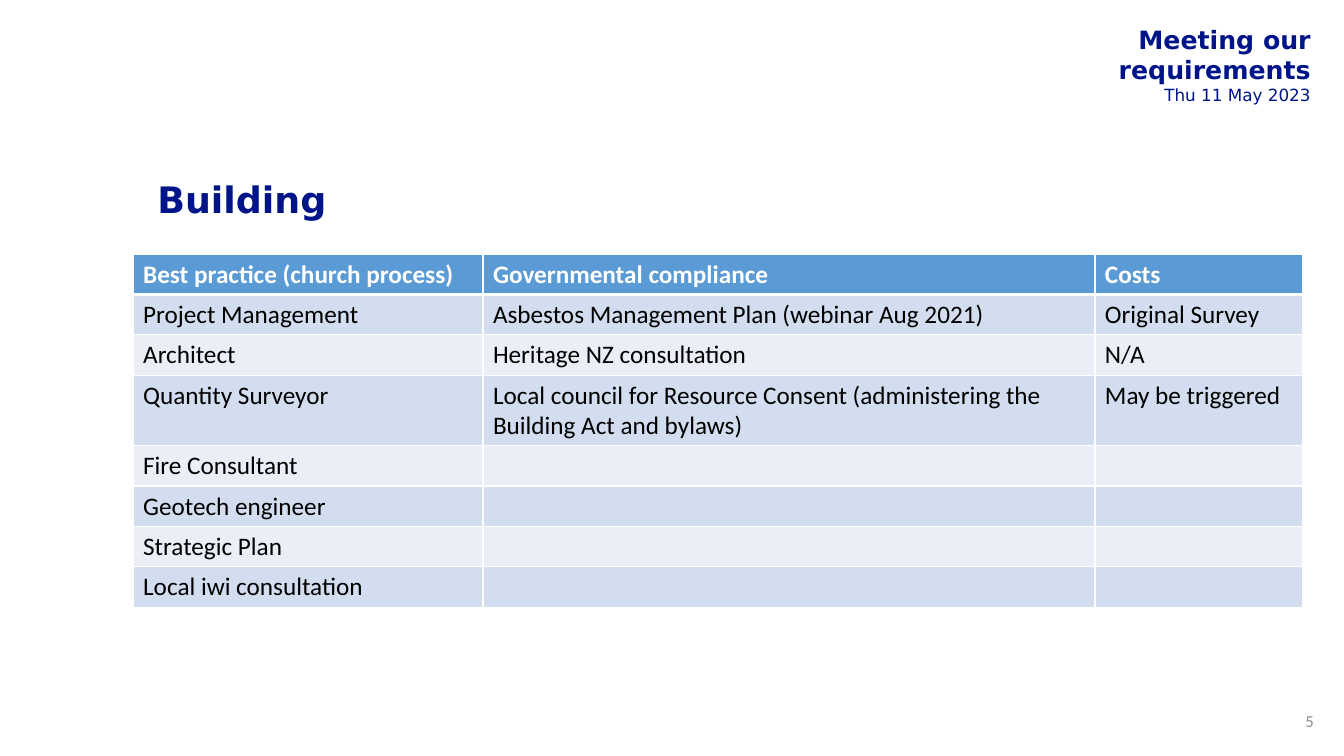
import dataclasses
import typing

import lxml.etree
import pptx
import pptx.dml.color
import pptx.enum.text
import pptx.oxml
import pptx.oxml.ns
import pptx.util

EMU_PER_PX = 9144
ALIGN = pptx.enum.text.PP_ALIGN
ANCHOR = pptx.enum.text.MSO_ANCHOR


@dataclasses.dataclass(frozen=True)
class Theme:
    navy: str = "001489"
    white: str = "FFFFFF"
    black: str = "000000"
    grey: str = "8C8C8C"
    header_fill: str = "5B9BD5"
    band_fills: tuple[str, str] = ("D2DEEF", "EAEFF7")
    heading_font: str = "DejaVu Sans"
    body_font: str = "Calibri"
    title_size: int = 26
    text_size: int = 18
    small_size: int = 12


@dataclasses.dataclass(frozen=True)
class Box:
    left: int
    top: int
    width: int
    height: int

    def emu(self) -> list[int]:
        return [px(length) for length in dataclasses.astuple(self)]


@dataclasses.dataclass(frozen=True)
class TextLine:
    text: str
    size: int
    bold: bool


THEME = Theme()
TITLE_BOX = Box(146, 150, 1120, 101)
MEETING_BOX = Box(922, 20, 385, 88)
NUMBER_BOX = Box(1271, 695, 42, 40)
TABLE_BOX = Box(132, 252, 1160, 320)
COLUMN_WIDTHS = (347, 607, 206)
MEETING_LINES = (
    TextLine("Meeting our requirements", THEME.text_size, True),
    TextLine("Thu 11 May 2023", THEME.small_size, False),
)
ROWS = (
    ("Best practice (church process)", "Governmental compliance", "Costs"),
    ("Project Management", "Asbestos Management Plan (webinar Aug 2021)", "Original Survey"),
    ("Architect", "Heritage NZ consultation", "N/A"),
    (
        "Quantity Surveyor",
        "Local council for Resource Consent (administering the Building Act and bylaws)",
        "May be triggered",
    ),
    ("Fire Consultant", "", ""),
    ("Geotech engineer", "", ""),
    ("Strategic Plan", "", ""),
    ("Local iwi consultation", "", ""),
)


def px(length: int) -> int:
    return length * EMU_PER_PX


def apply_format(target: typing.Any, values: dict[str, typing.Any]) -> None:
    for name, value in values.items():
        setattr(target, name, value)


def format_font(font: typing.Any, name: str, size: int, color: str, bold: bool = False) -> None:
    apply_format(font, {"name": name, "size": pptx.util.Pt(size), "bold": bold})
    font.color.rgb = pptx.dml.color.RGBColor.from_string(color)


def add_title(slide: typing.Any, text: str) -> None:
    title = slide.shapes.title
    apply_format(title, dict(zip(("left", "top", "width", "height"), TITLE_BOX.emu())))
    title.text = text
    apply_format(title.text_frame, {
        "vertical_anchor": ANCHOR.MIDDLE,
        "auto_size": pptx.enum.text.MSO_AUTO_SIZE.NONE,
    })
    paragraph = title.text_frame.paragraphs[0]
    apply_format(paragraph, {"alignment": ALIGN.LEFT, "line_spacing": 0.9})
    format_font(paragraph.runs[0].font, THEME.heading_font, THEME.title_size, THEME.navy, True)


def add_meeting(slide: typing.Any) -> None:
    frame = slide.shapes.add_textbox(*MEETING_BOX.emu()).text_frame
    apply_format(frame, {
        "word_wrap": True,
        "margin_left": px(100),
        "margin_right": px(7),
        "margin_top": px(4),
        "margin_bottom": px(4),
    })
    for index, line in enumerate(MEETING_LINES):
        paragraph = frame.add_paragraph() if index else frame.paragraphs[0]
        paragraph.alignment = ALIGN.RIGHT
        run = paragraph.add_run()
        run.text = line.text
        format_font(run.font, THEME.heading_font, line.size, THEME.navy, line.bold)


def add_slide_number(slide: typing.Any, number: int) -> None:
    frame = slide.shapes.add_textbox(*NUMBER_BOX.emu()).text_frame
    apply_format(frame, {"word_wrap": True, "vertical_anchor": ANCHOR.MIDDLE})
    paragraph = frame.paragraphs[0]
    paragraph.alignment = ALIGN.RIGHT
    run = paragraph.add_run()
    run.text = str(number)
    format_font(run.font, THEME.body_font, THEME.small_size, THEME.grey)


def add_border(cell: typing.Any, side: str, width: int) -> None:
    properties = cell._tc.get_or_add_tcPr()
    qn = pptx.oxml.ns.qn
    line = lxml.etree.SubElement(properties, qn(f"a:{side}"), w=str(pptx.util.Pt(width)))
    fill = lxml.etree.SubElement(line, qn("a:solidFill"))
    lxml.etree.SubElement(fill, qn("a:srgbClr"), val=THEME.white)


def fill_cell(cell: typing.Any, text: str, row_index: int) -> None:
    header = row_index == 0
    for side in ("lnL", "lnR", "lnT", "lnB"):
        heavy = (header and side == "lnB") or (row_index == 1 and side == "lnT")
        add_border(cell, side, 3 if heavy else 1)
    color = THEME.header_fill if header else THEME.band_fills[(row_index - 1) % 2]
    cell.fill.solid()
    cell.fill.fore_color.rgb = pptx.dml.color.RGBColor.from_string(color)
    cell.text = text
    text_color = THEME.white if header else THEME.black
    format_font(cell.text_frame.paragraphs[0].font, THEME.body_font, THEME.text_size,
                text_color, header)


def add_requirements_table(slide: typing.Any) -> None:
    frame = slide.shapes.add_table(len(ROWS), len(COLUMN_WIDTHS), *TABLE_BOX.emu())
    table = frame.table
    for column, width in zip(table.columns, COLUMN_WIDTHS):
        column.width = px(width)
    for row_index, texts in enumerate(ROWS):
        for column_index, text in enumerate(texts):
            fill_cell(table.cell(row_index, column_index), text, row_index)


def main() -> None:
    presentation = pptx.Presentation()
    apply_format(presentation, {"slide_width": px(1333), "slide_height": px(750)})
    slide = presentation.slides.add_slide(presentation.slide_layouts[5])
    add_meeting(slide)
    add_title(slide, "Building")
    add_slide_number(slide, 5)
    add_requirements_table(slide)
    presentation.save("out.pptx")


if __name__ == "__main__":
    main()
